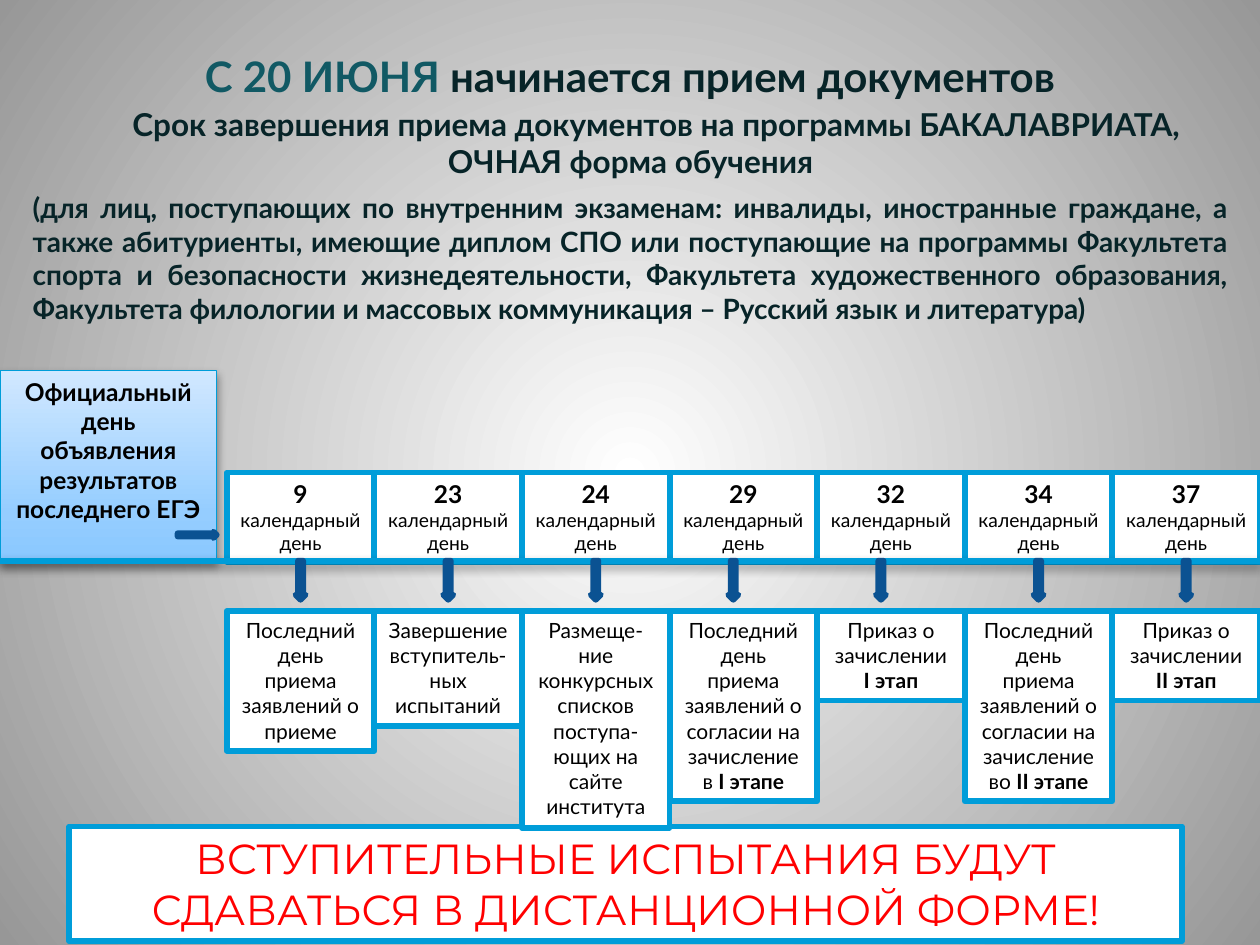
from lxml.etree import SubElement
from pptx import Presentation
from pptx.dml.color import RGBColor
from pptx.enum.shapes import MSO_CONNECTOR, MSO_SHAPE
from pptx.enum.text import MSO_ANCHOR, PP_ALIGN
from pptx.oxml.ns import qn
from pptx.util import Inches, Pt

COLORS = {
    "white": "FFFFFF", "gray": "979797", "black": "000000", "ink": "072428",
    "teal": "115964", "outline": "0669C4", "border": "009DD9", "red": "FF0000",
    "arrow": "0F6FC6", "arrow_edge": "0B5292",
    "sky_dark": "8AC8FF", "sky": "95CDFF", "sky_light": "D1E8FF",
}
BORDER = 3.35
STAGES = [
    ("9", 1.11, 0, [[("Последний день приема заявлений о приеме", False)]]),
    ("23", 0.91, 0, [[("Завершение вступитель-ных испытаний", False)]]),
    ("24", 1.72, 0, [[("Размеще-ние конкурсных списков поступа-ющих на сайте института", False)]]),
    ("29", 1.51, -0.08, [[("Последний день приема заявлений о согласии на зачисление в ", False),
                          ("I этапе", True)]]),
    ("32", 0.71, -0.08, [[("Приказ о зачислении", False)], [("I этап", True)]]),
    ("34", 1.51, 0, [[("Последний день приема заявлений о согласии на зачисление во ", False),
                      ("II этапе", True)]]),
    ("37", 0.71, 0, [[("Приказ о зачислении", False)], [("II этап", True)]]),
]


def rgb(name):
    """Return the palette colour called name."""
    return RGBColor.from_string(COLORS[name])


def add_color(parent, name):
    """Append a palette colour element to an XML parent."""
    return SubElement(parent, qn("a:srgbClr"), val=COLORS[name])


def set_gradient(fill, owner, stops):
    """Give a fill the listed (percent, colour) stops and return its XML."""
    fill.gradient()
    gradient = next(owner.iter(qn("a:gradFill")))
    for child in list(gradient):
        gradient.remove(child)
    stop_list = SubElement(gradient, qn("a:gsLst"))
    for percent, name in stops:
        add_color(SubElement(stop_list, qn("a:gs"), pos=str(percent * 1000)), name)
    return gradient


def add_shadow(shape):
    """Add a soft shadow that falls straight down."""
    effects = SubElement(shape._element.spPr, qn("a:effectLst"))
    shadow = SubElement(effects, qn("a:outerShdw"), blurRad=str(Pt(5.2)),
                        dist=str(Pt(3)), dir="5400000", rotWithShape="0")
    SubElement(add_color(shadow, "black"), qn("a:alpha"), val="40000")


def style_font(font, size, color="black", bold=False, name="Lato"):
    """Set the face, size, colour and weight of a font."""
    font.name, font.size, font.bold = name, Pt(size), bold
    font.color.rgb = rgb(color)


def place(shape, left, top, width, height):
    """Move and size a shape, with lengths in inches."""
    shape.left, shape.top = Inches(left), Inches(top)
    shape.width, shape.height = Inches(width), Inches(height)


def add_box(page, left, top, width, height, fill="white", line="border",
            weight=BORDER, kind=MSO_SHAPE.RECTANGLE):
    """Add a flat outlined shape with text starting at the top."""
    box = page.shapes.add_shape(kind, Inches(left), Inches(top), Inches(width), Inches(height))
    box.fill.solid()
    box.fill.fore_color.rgb = rgb(fill)
    box.line.color.rgb = rgb(line)
    box.line.width = Pt(weight)
    box.shadow.inherit = False
    box.text_frame.word_wrap = True
    box.text_frame.vertical_anchor = MSO_ANCHOR.TOP
    return box


def write(frame, index, text, align=PP_ALIGN.CENTER, **style):
    """Write one paragraph, adding it when it is not the first."""
    para = frame.add_paragraph() if index else frame.paragraphs[0]
    para.text = text
    para.alignment = align
    style_font(para.font, **style)
    return para


def fill_background(page):
    """Paint the background as a glow from the centre."""
    gradient = set_gradient(page.background.fill, page._element, [(0, "white"), (100, "gray")])
    glow = SubElement(gradient, qn("a:path"), path="circle")
    SubElement(glow, qn("a:fillToRect"), l="50000", t="50000", r="50000", b="50000")


def write_title(title, left, top, width, height):
    """Place the heading with its outlined date."""
    place(title, left, top, width, height)
    frame = title.text_frame
    frame.word_wrap = True
    frame.vertical_anchor = MSO_ANCHOR.TOP
    para = write(frame, 0, "", size=24, color="ink", bold=True)
    date = para.add_run()
    date.text = "С 20 ИЮНЯ "
    date.font.color.rgb = rgb("teal")
    outline = SubElement(date.font._element, qn("a:ln"), w=str(Pt(0.83)))
    add_color(SubElement(outline, qn("a:solidFill")), "outline")
    date.font._element.insert(0, outline)
    para.add_run().text = "начинается прием документов"


def write_terms(body, left, top, width, height):
    """Place the deadline heading and the note on applicants."""
    place(body, left, top, width, height)
    frame = body.text_frame
    frame.word_wrap = True
    frame.vertical_anchor = MSO_ANCHOR.TOP
    terms = [
        ("Срок завершения приема документов на программы БАКАЛАВРИАТА, ОЧНАЯ форма обучения",
         PP_ALIGN.CENTER, 18, 0.41),
        ("(для лиц, поступающих по внутренним экзаменам: инвалиды, иностранные граждане, "
         "а также абитуриенты, имеющие диплом СПО или поступающие на программы Факультета "
         "спорта и безопасности жизнедеятельности, Факультета художественного образования, "
         "Факультета филологии и массовых коммуникация – Русский язык и литература)",
         PP_ALIGN.JUSTIFY, 16, 0),
    ]
    for index, (text, align, size, indent) in enumerate(terms):
        para = frame.add_paragraph() if index else frame.paragraphs[0]
        properties = para._p.get_or_add_pPr()
        properties.set("marL", "0")
        properties.set("indent", str(Inches(indent)))
        SubElement(properties, qn("a:buNone"))
        para.text = text
        para.alignment = align
        para.space_before, para.space_after = Pt(0), Pt(6)
        style_font(para.font, size, "ink", True)


def add_start(page, left, top, width, height):
    """Add the starting day and the arrow leading out of it."""
    box = add_box(page, left, top, width, height, weight=0.75)
    gradient = set_gradient(box.fill, box._element.spPr,
                            [(0, "sky_dark"), (25, "sky"), (100, "sky_light")])
    SubElement(gradient, qn("a:lin"), ang=str(270 * 60000), scaled="0")
    box._element.spPr.remove(box._element.spPr.find(qn("a:effectLst")))
    add_shadow(box)
    write(box.text_frame, 0, "Официальный день объявления результатов последнего ЕГЭ",
          size=14, bold=True)


def add_timeline(page, left, top, width, day_height):
    """Add the days, the axis, the arrows and the events below them."""
    column = width / len(STAGES)
    axis_y = top + 0.7
    for index, (day, height, _, event) in enumerate(STAGES):
        x = left + index * column
        frame = add_box(page, x, top, column, day_height).text_frame
        write(frame, 0, day, size=14, bold=True)
        write(frame, 1, "календарный день", size=11)
        frame = add_box(page, x, top + 1.1, column, height).text_frame
        for row, spans in enumerate(event):
            para = write(frame, row, "", size=12)
            for text, bold in spans:
                span = para.add_run()
                span.text = text
                span.font.bold = bold

    axis = page.shapes.add_connector(MSO_CONNECTOR.STRAIGHT, Inches(0), Inches(axis_y),
                                     Inches(left + width), Inches(axis_y))
    axis.line.color.rgb = rgb("border")
    axis.line.width = Pt(BORDER)
    add_shadow(axis)
    add_box(page, 1.41, 4.22, 0.31, 0.05, "arrow", "arrow_edge", kind=MSO_SHAPE.RIGHT_ARROW)
    for index, (_, _, shift, _) in enumerate(STAGES):
        x = left + (index + 0.5) * column + shift - 0.04
        add_box(page, x, axis_y, 0.08, 0.31, "arrow", "arrow_edge", kind=MSO_SHAPE.DOWN_ARROW)


def add_notice(page, left, top, width, height):
    """Add the notice about remote exams."""
    box = add_box(page, left, top, width, height)
    write(box.text_frame, 0, "ВСТУПИТЕЛЬНЫЕ ИСПЫТАНИЯ БУДУТ СДАВАТЬСЯ В ДИСТАНЦИОННОЙ ФОРМЕ!",
          size=24, color="red", name="Montserrat")


def main():
    """Build the admission timetable slide."""
    deck = Presentation()
    deck.slide_width, deck.slide_height = Inches(10), Inches(7.5)
    page = deck.slides.add_slide(deck.slide_layouts[1])
    fill_background(page)
    write_title(page.shapes.title, 0, 0.35, 10, 0.5)
    write_terms(page.placeholders[1], 0.16, 0.78, 9.69, 2.56)
    add_notice(page, 0.55, 6.56, 8.83, 0.91)
    add_start(page, 0, 2.94, 1.72, 1.51)
    add_timeline(page, 1.8, 3.75, 8.2, 0.71)
    deck.save("out.pptx")


if __name__ == "__main__":
    main()
